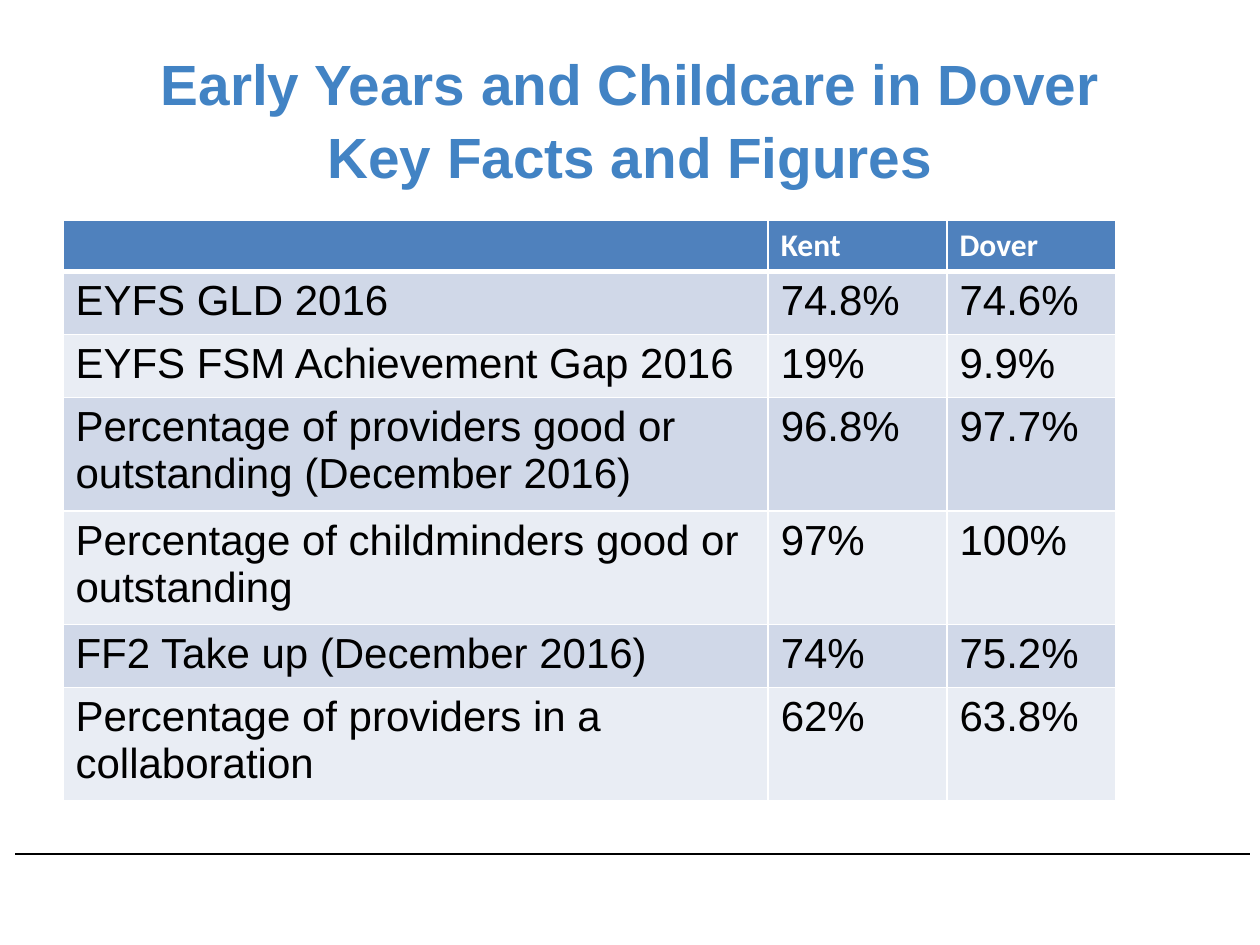
from lxml.etree import SubElement
from pptx import Presentation
from pptx.dml.color import RGBColor
from pptx.enum.shapes import MSO_CONNECTOR
from pptx.enum.text import MSO_ANCHOR, PP_ALIGN
from pptx.oxml.ns import qn
from pptx.util import Pt

# Content
TITLE = "Early Years and Childcare in Dover\vKey Facts and Figures"
ROWS = [
    ("", "Kent", "Dover"),
    ("EYFS GLD 2016", "74.8%", "74.6%"),
    ("EYFS FSM Achievement Gap 2016", "19%", "9.9%"),
    ("Percentage of providers good or outstanding (December 2016)", "96.8%", "97.7%"),
    ("Percentage of childminders good or outstanding", "97%", "100%"),
    ("FF2 Take up (December 2016)", "74%", "75.2%"),
    ("Percentage of providers in a collaboration", "62%", "63.8%"),
]
COL_WIDTHS = (403, 102.2, 96.5)
ROW_HEIGHT = 29.2
TABLE_HEIGHT = 332
COLORS = {"title": "4283C4", "header": "4F81BD", "odd": "D0D8E8",
          "even": "E9EDF4", "white": "FFFFFF", "black": "000000"}


def rgb(name):
    return RGBColor.from_string(COLORS[name])


def style(p, font, size, color, bold=False):
    for r in p.runs:
        r.font.name, r.font.size, r.font.bold = font, Pt(size), bold
        r.font.color.rgb = rgb(color)


def set_borders(cell, bottom):
    tcPr = cell._tc.get_or_add_tcPr()
    sides = (("a:lnL", 1), ("a:lnR", 1), ("a:lnT", 1), ("a:lnB", bottom))
    for i, (tag, width) in enumerate(sides):
        ln = SubElement(tcPr, qn(tag), w=str(Pt(width)))
        fill = SubElement(ln, qn("a:solidFill"))
        SubElement(fill, qn("a:srgbClr"), val=COLORS["white"])
        tcPr.insert(i, ln)  # borders come before the fill


prs = Presentation()
prs.slide_width, prs.slide_height = Pt(720), Pt(540)
s = prs.slides.add_slide(prs.slide_layouts[6])

# Footer rule
rule = s.shapes.add_connector(MSO_CONNECTOR.STRAIGHT, Pt(8.64), Pt(488), Pt(714.24), Pt(488))
rule.line.color.rgb = rgb("black")
rule.line.width = Pt(1)
SubElement(rule._element.spPr, qn("a:effectLst"))

# Title
sp = s.shapes.add_textbox(Pt(36), Pt(21.6), Pt(648), Pt(90))
tf = sp.text_frame
tf.word_wrap = True
tf.vertical_anchor = MSO_ANCHOR.MIDDLE
p = tf.paragraphs[0]
p.text = TITLE
p.alignment = PP_ALIGN.CENTER
p.line_spacing = 1.07
style(p, "Arial", 32.4, "title", True)

# Table
frame = s.shapes.add_table(len(ROWS), len(COL_WIDTHS), Pt(36), Pt(126),
                           Pt(sum(COL_WIDTHS)), Pt(TABLE_HEIGHT))
table = frame.table
for col, width in zip(table.columns, COL_WIDTHS):
    col.width = Pt(width)
for i, values in enumerate(ROWS):
    table.rows[i].height = Pt(ROW_HEIGHT)
    for j, value in enumerate(values):
        cell = table.cell(i, j)
        cell.text = value
        cell.fill.solid()
        band = "header" if i == 0 else "odd" if i % 2 else "even"
        cell.fill.fore_color.rgb = rgb(band)
        set_borders(cell, 3 if i == 0 else 1)
        p = cell.text_frame.paragraphs[0]
        if i == 0:
            style(p, "Calibri", 18, "white", True)
        else:
            style(p, "Arial", 24, "black")
frame.height = Pt(TABLE_HEIGHT)

prs.save("out.pptx")
